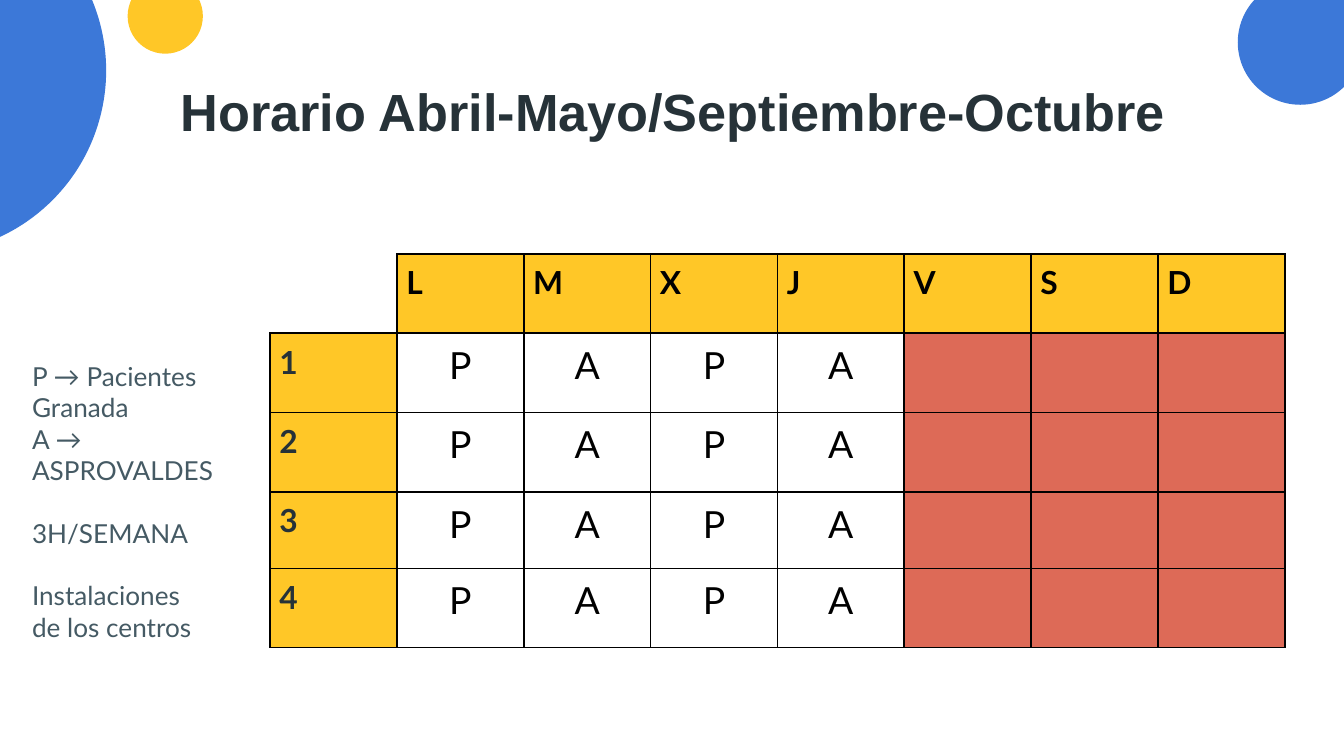
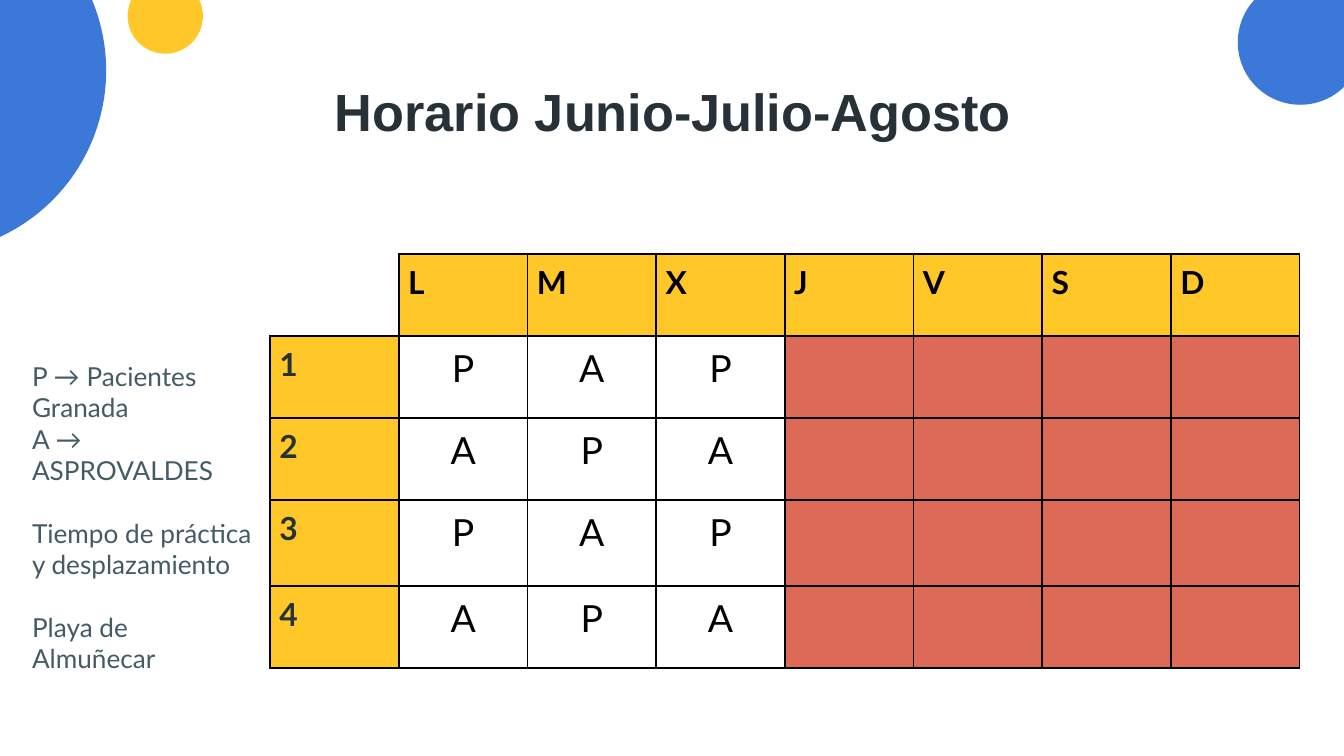
"""Build two weekly timetable slides."""
from dataclasses import dataclass

from lxml import etree
from pptx import Presentation
from pptx.dml.color import RGBColor
from pptx.enum.shapes import MSO_SHAPE, PP_PLACEHOLDER
from pptx.enum.text import MSO_ANCHOR, MSO_AUTO_SIZE, PP_ALIGN
from pptx.oxml.ns import qn
from pptx.util import Inches, Pt

OVAL = MSO_SHAPE.OVAL
TITLE = PP_PLACEHOLDER.TITLE
TOP = MSO_ANCHOR.TOP
NO_FIT = MSO_AUTO_SIZE.NONE
LEFT, CENTER = PP_ALIGN.LEFT, PP_ALIGN.CENTER


@dataclass(frozen=True)
class Theme:
    """Colours, fonts and type sizes of the deck."""
    blue: str = "3C78D8"
    yellow: str = "FFC727"
    red: str = "DD6A57"
    dark: str = "263238"
    slate: str = "455A64"
    black: str = "000000"
    title_font: str = "Arial"
    body_font: str = "Lato"
    title_size: int = 28
    mark_size: int = 20
    head_size: int = 17
    legend_size: int = 14
    legend_gap: float = 16.8


THEME = Theme()
DAYS = "LMXJVSD"
CIRCLES = [
    (-1.94, -0.84, 2.73, THEME.blue),
    (0.95, -0.16, 0.56, THEME.yellow),
    (9.21, -0.15, 0.93, THEME.blue),
]
CENTRES = ["P → Pacientes Granada", "A → ASPROVALDES"]
TIMETABLES = [
    dict(
        title="Horario Abril-Mayo/Septiembre-Octubre",
        weeks=["PAPA"] * 4,
        width=7.55,
        row_heights=[0.59, 0.59, 0.59, 0.57, 0.59],
        legend=[CENTRES, ["3H/SEMANA"], ["Instalaciones", "de los centros"]],
        legend_height=2.09,
    ),
    dict(
        title="Horario Junio-Julio-Agosto",
        weeks=["PAP", "APA"] * 2,
        width=7.66,
        row_heights=[0.61, 0.61, 0.61, 0.64, 0.61],
        legend=[CENTRES, ["Tiempo de práctica y desplazamiento"],
                ["Playa de", "Almuñecar"]],
        legend_height=2.32,
    ),
]


def write(p, text, *, size, color, font=THEME.body_font, bold=False,
          align=LEFT, before=0):
    """Write one formatted run into a paragraph."""
    p.alignment = align
    p.space_before = Pt(before)
    r = p.add_run()
    r.text = text
    r.font.name = font
    r.font.size = Pt(size)
    r.font.bold = bold
    r.font.color.rgb = RGBColor.from_string(color)


def prepare_layout(layout, slide):
    """Give the layout its title place and its circles, drawn through a slide."""
    for ph in list(layout.placeholders):
        if ph.placeholder_format.type == TITLE:
            ph.left, ph.top = Inches(0.79), Inches(0.49)
            ph.width, ph.height = Inches(8.43), Inches(0.63)
        else:
            ph._element.getparent().remove(ph._element)
    tree = layout.shapes._spTree
    for i, (x, y, size, color) in enumerate(CIRCLES):
        sp = slide.shapes.add_shape(OVAL, Inches(x), Inches(y),
                                    Inches(size), Inches(size))
        sp.shadow.inherit = False
        sp.fill.solid()
        sp.fill.fore_color.rgb = RGBColor.from_string(color)
        sp.line.fill.background()
        sp._element.nvSpPr.cNvPr.id = 20 + i
        tree.insert(2 + i, sp._element)


def add_title(slide, text):
    """Fill the title placeholder."""
    tf = slide.shapes.title.text_frame
    set_margins(tf, 0.1)
    tf.vertical_anchor = TOP
    tf.auto_size = NO_FIT
    write(tf.paragraphs[0], text, size=THEME.title_size, color=THEME.dark,
          font=THEME.title_font, bold=True, align=CENTER)


def set_margins(box, margin):
    """Set four equal margins on a text frame or a cell."""
    box.margin_left = box.margin_right = Inches(margin)
    box.margin_top = box.margin_bottom = Inches(margin)


def set_borders(cell, sides):
    """Draw thin black borders on the named sides and clear the others."""
    tc_pr = cell._tc.get_or_add_tcPr()
    for i, side in enumerate("LRTB"):
        ln = etree.Element(qn(f"a:ln{side}"), w=str(Pt(1)))
        if side in sides:
            fill = etree.SubElement(ln, qn("a:solidFill"))
            etree.SubElement(fill, qn("a:srgbClr"), val=THEME.black)
        else:
            etree.SubElement(ln, qn("a:noFill"))
        tc_pr.insert(i, ln)


def fill_cell(cell, text="", fill=None, sides="LRTB", **fmt):
    """Set the text, fill and borders of a cell."""
    set_margins(cell, 0.07)
    if text:
        write(cell.text_frame.paragraphs[0], text, **fmt)
    if fill:
        cell.fill.solid()
        cell.fill.fore_color.rgb = RGBColor.from_string(fill)
    else:
        cell.fill.background()
    set_borders(cell, sides)


def add_timetable(slide, weeks, width, row_heights):
    """Add the grid of weeks by days, with days off in red."""
    cols = len(DAYS) + 1
    table = slide.shapes.add_table(
        len(row_heights), cols, Inches(2.01), Inches(1.89),
        Inches(width), Inches(sum(row_heights))).table
    table.first_row = table.horz_banding = False
    for row, height in zip(table.rows, row_heights):
        row.height = Inches(height)

    head = dict(fill=THEME.yellow, size=THEME.head_size, bold=True)
    fill_cell(table.cell(0, 0), sides="RB")
    for c, day in enumerate(DAYS, 1):
        fill_cell(table.cell(0, c), day, color=THEME.black, **head)
    for r, marks in enumerate(weeks, 1):
        fill_cell(table.cell(r, 0), str(r), color=THEME.dark, **head)
        for c in range(1, cols):
            if c <= len(marks):
                fill_cell(table.cell(r, c), marks[c - 1], align=CENTER,
                          size=THEME.mark_size, color=THEME.black)
            else:
                fill_cell(table.cell(r, c), fill=THEME.red)


def add_legend(slide, groups, height):
    """Add the legend, with a gap before each group after the first."""
    tf = slide.shapes.add_textbox(Inches(0.14), Inches(2.58),
                                  Inches(1.93), Inches(height)).text_frame
    tf.word_wrap = True
    set_margins(tf, 0.1)
    p = tf.paragraphs[0]
    for g, lines in enumerate(groups):
        for i, line in enumerate(lines):
            if g or i:
                p = tf.add_paragraph()
            write(p, line, size=THEME.legend_size, color=THEME.slate,
                  before=THEME.legend_gap if g and not i else 0)


def main():
    """Build and save the deck."""
    prs = Presentation()
    prs.slide_width = Inches(10)
    prs.slide_height = prs.slide_width * 9 // 16
    layout = prs.slide_layouts.get_by_name("Title Only")
    slides = [prs.slides.add_slide(layout) for _ in TIMETABLES]
    prepare_layout(layout, slides[0])
    for slide, plan in zip(slides, TIMETABLES):
        add_title(slide, plan["title"])
        add_timetable(slide, plan["weeks"], plan["width"],
                      plan["row_heights"])
        add_legend(slide, plan["legend"], plan["legend_height"])
    prs.save("out.pptx")


if __name__ == "__main__":
    main()
